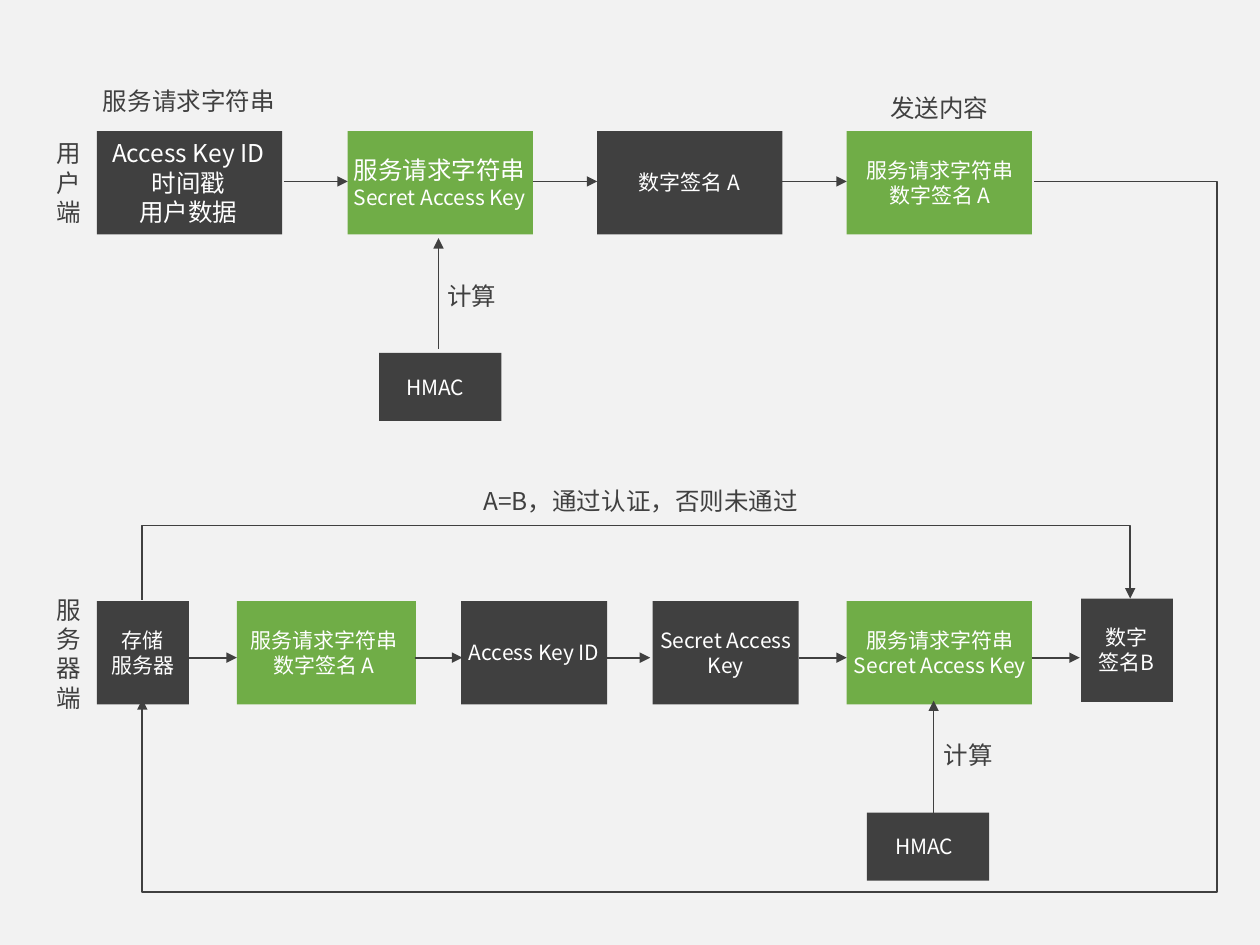
from lxml.etree import SubElement
from pptx import Presentation
from pptx.dml.color import RGBColor
from pptx.enum.shapes import MSO_CONNECTOR, MSO_SHAPE
from pptx.enum.text import MSO_AUTO_SIZE, PP_ALIGN
from pptx.oxml.ns import qn
from pptx.util import Inches, Pt

FONT = "Noto Sans CJK SC"
BACKGROUND = RGBColor(0xF2, 0xF2, 0xF2)
DARK = RGBColor(0x40, 0x40, 0x40)
GREEN = RGBColor(0x70, 0xAD, 0x47)
WHITE = RGBColor(0xFF, 0xFF, 0xFF)

CLIENT_TOP, SERVER_TOP, RESULT_TOP = 1.04, 4.77, 4.75
STEP_HEIGHT, HMAC_HEIGHT = 0.82, 0.54
CLIENT_ARROW_Y, SERVER_ARROW_Y = 1.44, 5.22

REQUEST = "服务请求字符串"
SIGNATURE = "数字签名 A"
SECRET = "Secret Access Key"

# left, top, width, height, fill, label left, label width, lines of (text, size)
BOXES = [
    (0.77, CLIENT_TOP, 1.47, STEP_HEIGHT, DARK, 0.75, 1.49,
     [("Access Key ID", 14), ("时间戳", 14), ("用户数据", 14)]),
    (2.76, CLIENT_TOP, 1.47, STEP_HEIGHT, GREEN, 2.68, 1.62,
     [(REQUEST, 14), (SECRET, 12)]),
    (4.74, CLIENT_TOP, 1.47, STEP_HEIGHT, DARK, 4.95, 1.04,
     [(SIGNATURE, 12)]),
    (6.72, CLIENT_TOP, 1.47, STEP_HEIGHT, GREEN, 6.77, 1.38,
     [(REQUEST, 12), (SIGNATURE, 12)]),
    (3.01, 2.8, 0.97, HMAC_HEIGHT, DARK, 3.09, 0.73, [("HMAC", 12)]),
    (0.77, SERVER_TOP, 0.73, STEP_HEIGHT, DARK, 0.78, 0.71,
     [("存储", 12), ("服务器", 12)]),
    (1.88, SERVER_TOP, 1.42, STEP_HEIGHT, GREEN, 1.88, 1.38,
     [(REQUEST, 12), (SIGNATURE, 12)]),
    (3.66, SERVER_TOP, 1.16, STEP_HEIGHT, DARK, 3.59, 1.3,
     [("Access Key ID", 12)]),
    (5.18, SERVER_TOP, 1.16, STEP_HEIGHT, DARK, 5.12, 1.28,
     [("Secret Access", 12), ("Key", 12)]),
    (6.72, SERVER_TOP, 1.47, STEP_HEIGHT, GREEN, 6.65, 1.62,
     [(REQUEST, 12), (SECRET, 12)]),
    (8.58, RESULT_TOP, 0.73, STEP_HEIGHT, DARK, 8.62, 0.64,
     [("数字", 12), ("签名B", 12)]),
    (6.88, 6.45, 0.97, HMAC_HEIGHT, DARK, 6.97, 0.73, [("HMAC", 12)]),
]

# left, top, width, lines
CAPTIONS = [
    (0.71, 0.63, 1.58, [REQUEST]),
    (6.96, 0.69, 0.99, ["发送内容"]),
    (3.45, 2.18, 0.59, ["计算"]),
    (7.39, 5.82, 0.59, ["计算"]),
    (3.7, 3.81, 2.77, ["A=B，通过认证，否则未通过"]),
    (0.35, 1.05, 0.4, list("用户端")),
    (0.35, 4.67, 0.4, list("服务器端")),
]

CLIENT_ARROWS = [(2.25, 2.76), (4.23, 4.74), (6.21, 6.72)]
SERVER_ARROWS = [(1.5, 1.88), (3.29, 3.67), (4.78, 5.16), (6.34, 6.72), (8.19, 8.57)]
HMAC_ARROWS = [(3.48, 2.77, 1.89), (7.41, 6.45, 5.56)]  # x, start y, end y
SEND_ROUTE = [(8.21, 1.44), (9.66, 1.44), (9.66, 7.08), (1.13, 7.08), (1.13, 5.55)]
COMPARE_ROUTE = [(1.13, 4.76), (1.13, 4.17), (8.97, 4.17), (8.97, 4.75)]


def label_height(lines):
    return 0.1 + sum(size for _, size in lines) * 1.2 / 72


def add_label(slide, left, top, width, lines, color, wrap=False):
    height = label_height(lines)
    box = slide.shapes.add_textbox(*map(Inches, (left, top, width, height)))
    frame = box.text_frame
    frame.word_wrap = wrap
    frame.auto_size = MSO_AUTO_SIZE.SHAPE_TO_FIT_TEXT
    frame.text = "\n".join(text for text, _ in lines)
    for paragraph, (_, size) in zip(frame.paragraphs, lines):
        paragraph.alignment = PP_ALIGN.CENTER
        font = paragraph.font
        font.size = Pt(size)
        font.color.rgb = color
        font.name = FONT
        properties = paragraph._p.pPr.find(qn("a:defRPr"))
        SubElement(properties, qn("a:ea")).set("typeface", FONT)


def add_box(slide, left, top, width, height, fill, label_left, label_width, lines):
    """Add a filled step with its label centred vertically on it."""
    shape = slide.shapes.add_shape(
        MSO_SHAPE.RECTANGLE, *map(Inches, (left, top, width, height)))
    shape.shadow.inherit = False
    shape.fill.solid()
    shape.fill.fore_color.rgb = fill
    shape.line.fill.background()
    label_top = top + (height - label_height(lines)) / 2
    add_label(slide, label_left, label_top, label_width, lines, WHITE,
              wrap=top == RESULT_TOP)


def style_arrow(shape, weight):
    shape.line.color.rgb = DARK
    shape.line.width = Pt(weight)
    SubElement(shape.line._get_or_add_ln(), qn("a:tailEnd")).set("type", "triangle")


def add_arrow(slide, start, end, weight=1):
    connector = slide.shapes.add_connector(
        MSO_CONNECTOR.STRAIGHT, *map(Inches, (*start, *end)))
    style_arrow(connector, weight)
    SubElement(connector._element.spPr, qn("a:effectLst"))


def add_route(slide, points):
    """Add an open bent arrow through the points."""
    start, *rest = [(Inches(x), Inches(y)) for x, y in points]
    builder = slide.shapes.build_freeform(*start)
    builder.add_line_segments(rest, close=False)
    shape = builder.convert_to_shape()
    shape.fill.background()
    style_arrow(shape, 1)
    shape.shadow.inherit = False


def main():
    presentation = Presentation()
    presentation.slide_width = Inches(10)
    presentation.slide_height = Inches(7.5)
    slide = presentation.slides.add_slide(presentation.slide_layouts[6])
    slide.background.fill.solid()
    slide.background.fill.fore_color.rgb = BACKGROUND

    for box in BOXES:
        add_box(slide, *box)
    for left, top, width, lines in CAPTIONS:
        add_label(slide, left, top, width, [(text, 14) for text in lines], DARK)
    for y, arrows in ((CLIENT_ARROW_Y, CLIENT_ARROWS), (SERVER_ARROW_Y, SERVER_ARROWS)):
        for start_x, end_x in arrows:
            add_arrow(slide, (start_x, y), (end_x, y))
    for x, start_y, end_y in HMAC_ARROWS:
        add_arrow(slide, (x, start_y), (x, end_y), weight=0.5)
    for route in (SEND_ROUTE, COMPARE_ROUTE):
        add_route(slide, route)

    presentation.save("out.pptx")


if __name__ == "__main__":
    main()
